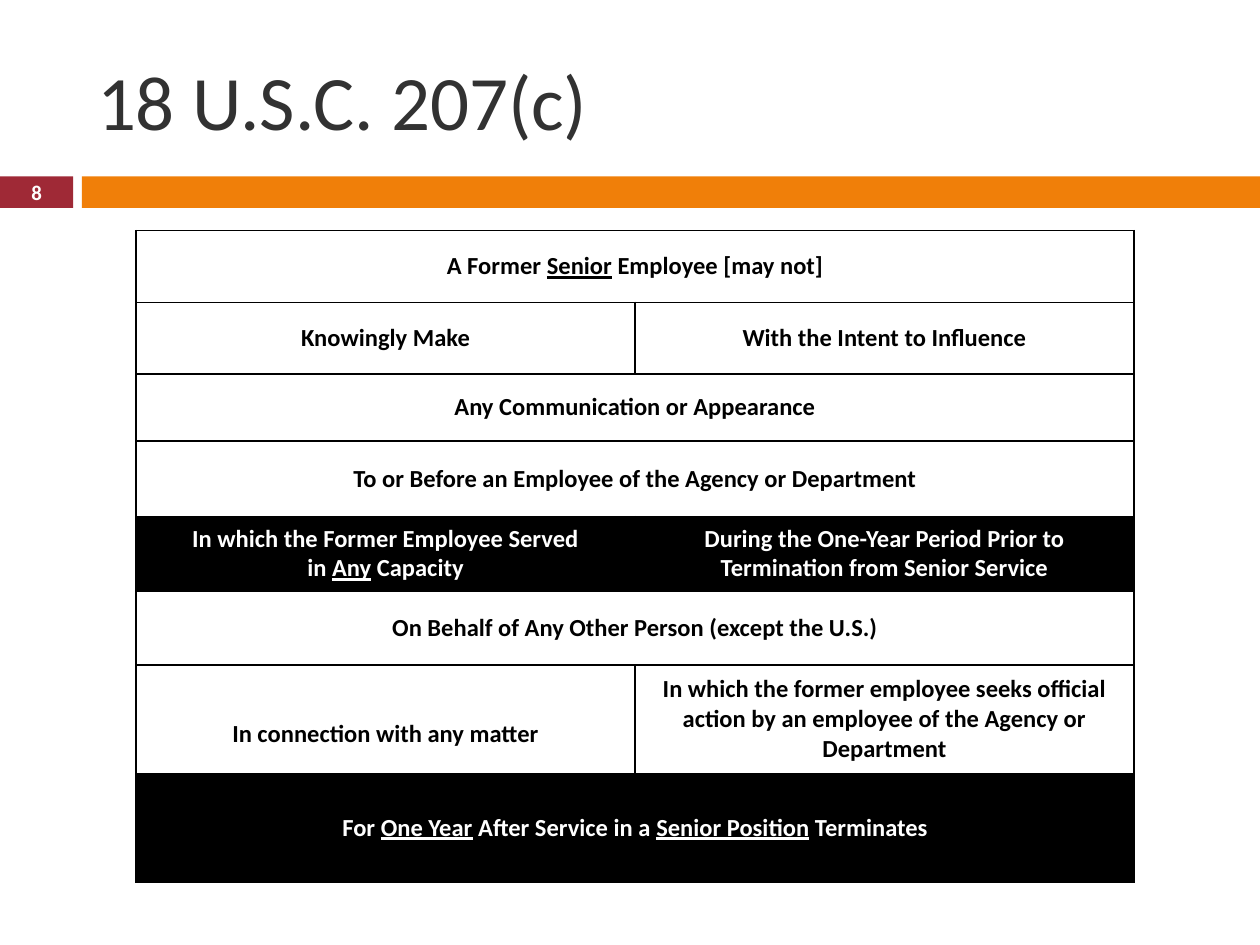
from dataclasses import dataclass

from lxml.etree import SubElement as Sub
from pptx import Presentation
from pptx.dml.color import RGBColor as Rgb
from pptx.enum.shapes import MSO_SHAPE as Shape
from pptx.enum.text import MSO_ANCHOR as Anchor, PP_ALIGN as Align
from pptx.oxml.ns import qn
from pptx.util import Inches, Pt

WIDE, HIGH = 10, 7.5
FONT = "Calibri"
HEX = {"red": "9F2936", "orange": "F07F09", "gray": "323232",
       "black": "000000", "white": "FFFFFF"}
BAR_TOP, BAR_HIGH = 1.4, 0.25
NUM_WIDE, BAR_LEFT = 0.58, 0.65
LEFT, TOP, COL = 1.08, 1.83, 3.96


@dataclass
class Row:
    """One table row; underscores enclose underlined words."""
    high: float
    texts: list[str]
    dark: bool = False
    drop: float = 0  # extra top margin of the first cell


ROWS = [
    Row(0.57, ["A Former _Senior_ Employee [may not]"]),
    Row(0.57, ["Knowingly Make", "With the Intent to Influence"]),
    Row(0.53, ["Any Communication or Appearance"]),
    Row(0.6, ["To or Before an Employee of the Agency or Department"]),
    Row(0.59, ["In which the Former Employee Served\nin _Any_ Capacity",
               "During the One-Year Period Prior to Termination from Senior Service"], dark=True),
    Row(0.59, ["On Behalf of Any Other Person (except the U.S.)"]),
    Row(0.86, ["In connection with any matter",
               "In which the former employee seeks official action by an employee "
               "of the Agency or Department"], drop=0.24),
    Row(0.86, ["For _One Year_ After Service in a _Senior Position_ Terminates"], dark=True),
]


def tint(name: str) -> Rgb:
    return Rgb.from_string(HEX[name])


def write(frame, text: str, *, size: float, color: str, bold=False, align=Align.CENTER) -> None:
    for i, line in enumerate(text.split("\n")):
        para = frame.paragraphs[0] if i == 0 else frame.add_paragraph()
        para.alignment = align
        for k, part in enumerate(line.split("_")):
            run = para.add_run()
            run.text = part
            font = run.font
            font.name, font.size, font.bold = FONT, Pt(size), bold
            font.color.rgb = tint(color)
            if k % 2:
                font.underline = True


def add_bar(slide, left: float, wide: float, color: str):
    bar = slide.shapes.add_shape(Shape.RECTANGLE, Inches(left), Inches(BAR_TOP),
                                 Inches(wide), Inches(BAR_HIGH))
    bar.shadow.inherit = False
    bar.fill.solid()
    bar.fill.fore_color.rgb = tint(color)
    bar.line.fill.background()
    return bar


def frame_cell(cell) -> None:
    """Give a cell thin black borders on all sides."""
    props = cell._tc.get_or_add_tcPr()
    for side in "LRTB":
        line = Sub(props, qn(f"a:ln{side}"), w=str(Pt(1)))
        Sub(Sub(line, qn("a:solidFill")), qn("a:srgbClr"), val=HEX["black"])


def fill_row(table, i: int, row: Row) -> None:
    table.rows[i].height = Inches(row.high)
    cells = [table.cell(i, k) for k in range(2)]
    for cell in cells:
        frame_cell(cell)
        if row.dark:
            cell.fill.solid()
            cell.fill.fore_color.rgb = tint("black")
        else:
            cell.fill.background()
        cell.vertical_anchor = Anchor.MIDDLE
        cell.margin_left = cell.margin_right = Inches(0.07)
        cell.margin_top = cell.margin_bottom = 0
    cells[0].margin_top = Inches(row.drop)
    if len(row.texts) == 1:
        cells[0].merge(cells[1])
    for cell, text in zip(cells, row.texts):
        write(cell.text_frame, text, size=14, bold=True,
              color="white" if row.dark else "black")


def add_grid(slide) -> None:
    table = slide.shapes.add_table(len(ROWS), 2, Inches(LEFT), Inches(TOP), Inches(2 * COL),
                                   Inches(sum(row.high for row in ROWS))).table
    table.first_row = table.horz_banding = False
    for col in table.columns:
        col.width = Inches(COL)
    for i, row in enumerate(ROWS):
        fill_row(table, i, row)


def main() -> None:
    deck = Presentation()
    deck.slide_width, deck.slide_height = Inches(WIDE), Inches(HIGH)
    slide = deck.slides.add_slide(deck.slide_layouts[5])

    badge = add_bar(slide, 0, NUM_WIDE, "red")
    add_bar(slide, BAR_LEFT, WIDE - BAR_LEFT, "orange")
    frame = badge.text_frame
    frame.margin_top = frame.margin_bottom = 0
    frame.vertical_anchor = Anchor.MIDDLE
    write(frame, "8", size=11.9, color="white", bold=True)

    title = slide.shapes.title
    title.left, title.top = Inches(0.67), Inches(0.25)
    title.width, title.height = Inches(8.92), Inches(1.08)
    title.text_frame.vertical_anchor = Anchor.MIDDLE
    write(title.text_frame, "18 U.S.C. 207(c)", size=44, color="gray", align=Align.LEFT)

    add_grid(slide)
    deck.save("out.pptx")


if __name__ == "__main__":
    main()
